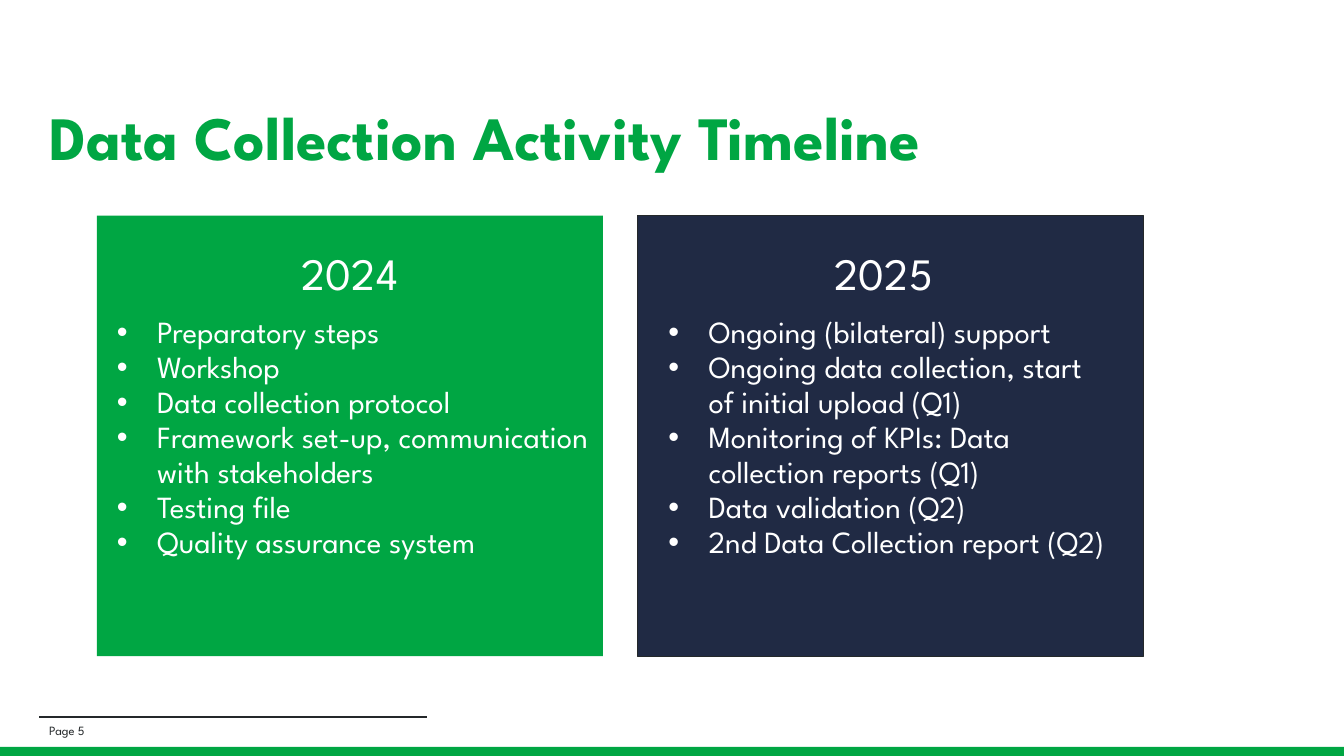
import pptx
import pptx.dml.color
import pptx.enum.shapes
import pptx.enum.text
import pptx.oxml
import pptx.oxml.ns
import pptx.util
from pptx.util import Inches

COLORS = {"green": "00A643", "navy": "202A44", "ink": "24282A", "white": "FFFFFF"}


class SlideBuilder:
    """Holds the slide and its style."""

    font_name = "League Spartan"

    def __init__(self, slide):
        self.slide = slide

    def color(self, name):
        return pptx.dml.color.RGBColor.from_string(COLORS[name])

    def style(self, paragraph, size, color, bold=False):
        paragraph.font.name = self.font_name
        paragraph.font.size = pptx.util.Pt(size)
        paragraph.font.bold = bold
        paragraph.font.color.rgb = self.color(color)

    def title(self, text, left, top, width, height):
        title = self.slide.shapes.title
        title.left, title.top = Inches(left), Inches(top)
        title.width, title.height = Inches(width), Inches(height)
        title.text_frame.text = text
        title.text_frame.vertical_anchor = pptx.enum.text.MSO_ANCHOR.MIDDLE
        paragraph = title.text_frame.paragraphs[0]
        paragraph.alignment = pptx.enum.text.PP_ALIGN.LEFT
        paragraph.line_spacing = 0.9
        self.style(paragraph, 44, "green", bold=True)

    def rectangle(self, left, top, width, height, fill, line=None):
        shape = self.slide.shapes.add_shape(
            pptx.enum.shapes.MSO_SHAPE.RECTANGLE,
            Inches(left), Inches(top), Inches(width), Inches(height))
        shape.shadow.inherit = False
        shape.fill.solid()
        shape.fill.fore_color.rgb = self.color(fill)
        if line:
            shape.line.color.rgb = self.color(line)
            shape.line.width = pptx.util.Pt(0.75)
        else:
            shape.line.fill.background()

    def rule(self, left, right, y):
        connector = self.slide.shapes.add_connector(
            pptx.enum.shapes.MSO_CONNECTOR.STRAIGHT,
            Inches(left), Inches(y), Inches(right), Inches(y))
        connector.line.color.rgb = self.color("ink")
        connector.line.width = pptx.util.Pt(1.5)
        properties = connector._element.spPr
        properties.append(pptx.oxml.parse_xml(
            f"<a:effectLst {pptx.oxml.ns.nsdecls('a')}/>"))

    def text_frame(self, left, top, width, height):
        box = self.slide.shapes.add_textbox(
            Inches(left), Inches(top), Inches(width), Inches(height))
        box.text_frame.word_wrap = True
        return box.text_frame

    def bullet(self, paragraph):
        properties = paragraph._p.get_or_add_pPr()
        properties.set("marL", str(Inches(0.5)))
        properties.set("indent", str(Inches(-0.4)))
        namespace = pptx.oxml.ns.nsdecls("a")
        for xml in (
            f'<a:buClr {namespace}><a:srgbClr val="{COLORS["white"]}"/></a:buClr>',
            f'<a:buFont {namespace} typeface="Arial"/>',
            f'<a:buChar {namespace} char="•"/>',
        ):
            properties.append(pptx.oxml.parse_xml(xml))

    def year_list(self, left, width, year, activities):
        frame = self.text_frame(left, 2.29, width, 3.8)
        frame.margin_top = Inches(0.19)
        heading = frame.paragraphs[0]
        heading.text = year
        heading.alignment = pptx.enum.text.PP_ALIGN.CENTER
        heading.line_spacing = 0.95
        self.style(heading, 32, "white")
        for index, activity in enumerate(activities):
            paragraph = frame.add_paragraph()
            paragraph.text = activity
            self.bullet(paragraph)
            paragraph.line_spacing = 0.95
            paragraph.space_before = pptx.util.Pt(0 if index else 10)
            self.style(paragraph, 22, "white")

    def page_label(self, text, left, top, width, height):
        frame = self.text_frame(left, top, width, height)
        frame.vertical_anchor = pptx.enum.text.MSO_ANCHOR.MIDDLE
        frame.paragraphs[0].text = text
        self.style(frame.paragraphs[0], 9, "ink")


def main():
    presentation = pptx.Presentation()
    presentation.slide_width = Inches(13.33)
    presentation.slide_height = Inches(7.5)
    slide = presentation.slides.add_slide(presentation.slide_layouts[5])
    builder = SlideBuilder(slide)

    # Title
    builder.title("Data Collection Activity Timeline", 0.39, 0.67, 12.54, 1.45)

    # Year panels: panel left, fill, line, text left, text width, year, activities
    panels = [
        (0.96, "green", None, 0.96, 5.02, "2024", [
            "Preparatory steps",
            "Workshop",
            "Data collection protocol",
            "Framework set-up, communication with stakeholders",
            "Testing file",
            "Quality assurance system",
        ]),
        (6.32, "navy", "ink", 6.43, 4.67, "2025", [
            "Ongoing (bilateral) support",
            "Ongoing data collection, start of initial upload (Q1)",
            "Monitoring of KPIs: Data collection reports (Q1)",
            "Data validation (Q2)",
            "2nd Data Collection report (Q2)",
        ]),
    ]
    for left, fill, line, text_left, text_width, year, activities in panels:
        builder.rectangle(left, 2.14, 5.02, 4.37, fill, line)
        builder.year_list(text_left, text_width, year, activities)

    # Footer
    builder.rectangle(0, 7.41, 13.33, 0.09, "green")
    builder.rule(0.39, 4.24, 7.11)
    builder.page_label("Page 5", 0.39, 7.15, 4.06, 0.19)

    presentation.save("out.pptx")


if __name__ == "__main__":
    main()
